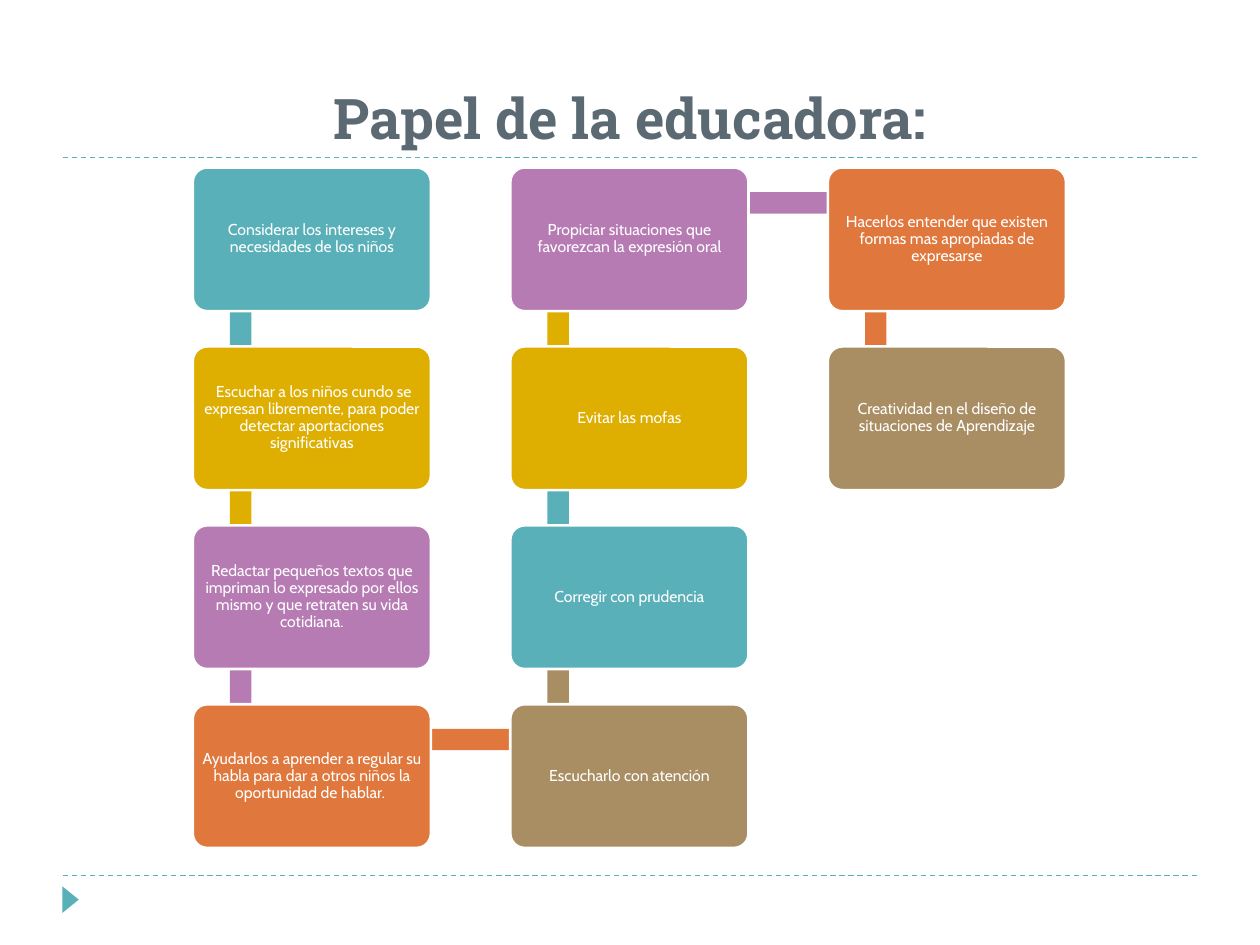
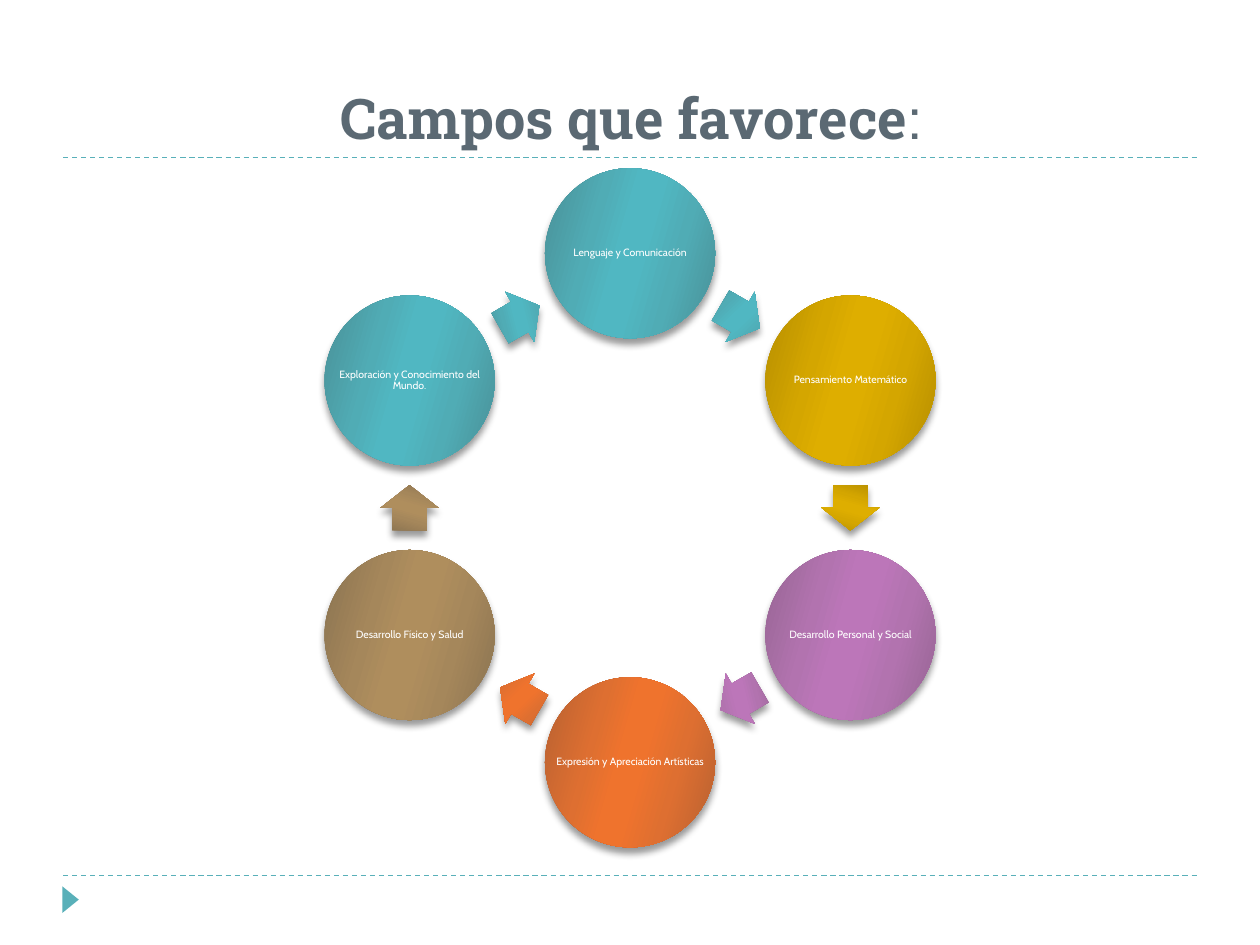
from dataclasses import dataclass
from itertools import cycle
from math import atan2, cos, degrees, hypot, radians, sin
from typing import Any

from lxml.etree import SubElement
from pptx import Presentation
from pptx.dml.color import RGBColor
from pptx.enum.dml import MSO_LINE
from pptx.enum.shapes import MSO_CONNECTOR, MSO_SHAPE
from pptx.enum.text import MSO_ANCHOR, MSO_AUTO_SIZE, PP_ALIGN
from pptx.oxml.ns import qn
from pptx.util import Inches, Pt

WHITE = RGBColor(0xFF, 0xFF, 0xFF)
SLATE = RGBColor(0x5B, 0x69, 0x73)
TEAL = RGBColor(0x59, 0xB0, 0xB9)
YELLOW = RGBColor(0xDE, 0xAE, 0x00)
PURPLE = RGBColor(0xB7, 0x7B, 0xB4)
ORANGE = RGBColor(0xE0, 0x77, 0x3C)
TAN = RGBColor(0xA9, 0x8D, 0x63)
BLACK = RGBColor(0x00, 0x00, 0x00)

TITLE_FONT = {"name": "Roboto Slab", "size": Pt(32), "bold": True}
STEP_FONT = {"name": "Cabin", "size": Pt(9)}
FIELD_FONT = {"name": "Cabin", "size": Pt(6)}

BOX_WIDTH, BOX_HEIGHT = 1.89, 1.14
GRID_LEFT, GRID_TOP = 1.53, 1.33
COLUMN_PITCH, ROW_PITCH, ROWS = 2.52, 1.42, 4
BAR_OFFSET_X, BAR_OFFSET_Y, BAR_THICKNESS = 0.38, 0.28, 0.17

RING_X, RING_Y, RING_RADIUS = 5.0, 4.03, 2.02
CIRCLE_SIZE = 1.35
ARROW_LENGTH, ARROW_WIDTH = 0.36, 0.46


@dataclass(frozen=True)
class Gloss:
    edge: RGBColor
    middle: RGBColor
    core: RGBColor

    def stops(self) -> list[tuple[int, RGBColor]]:
        return [(0, self.edge), (30, self.middle), (45, self.core),
                (55, self.core), (73, self.middle), (100, self.edge)]


@dataclass(frozen=True)
class Field:
    label: str
    gloss: Gloss


def gloss(*codes: str) -> Gloss:
    return Gloss(*(RGBColor.from_string(code) for code in codes))


GLOSS_TEAL = gloss("499097", "50ACB5", "50B7C2")
GLOSS_YELLOW = gloss("B68E00", "D4A600", "DEAE00")
GLOSS_PURPLE = gloss("966593", "B273AF", "BC76B9")
GLOSS_ORANGE = gloss("B76131", "DE6F31", "EF732D")
GLOSS_TAN = gloss("8A7351", "A5875B", "AF8E5D")

STEPS = [
    "Considerar los intereses y necesidades de los niños",
    " Escuchar a los niños cundo se expresan libremente, para poder detectar "
    "aportaciones significativas",
    "Redactar pequeños textos que impriman lo expresado por ellos mismo y que "
    "retraten su vida cotidiana.",
    "Ayudarlos a aprender a regular su habla para dar a otros niños la "
    "oportunidad de hablar. ",
    "Escucharlo con atención",
    "Corregir con prudencia",
    "Evitar las mofas",
    "Propiciar situaciones que favorezcan la expresión oral",
    "Hacerlos entender que existen formas mas apropiadas de expresarse",
    "Creatividad en el diseño de situaciones de Aprendizaje",
]

FIELDS = [
    Field("Lenguaje y Comunicación", GLOSS_TEAL),
    Field("Pensamiento Matemático", GLOSS_YELLOW),
    Field("Desarrollo Personal y Social", GLOSS_PURPLE),
    Field("Expresión y Apreciación Artísticas", GLOSS_ORANGE),
    Field("Desarrollo Físico y Salud", GLOSS_TAN),
    Field("Exploración y Conocimiento del Mundo.", GLOSS_TEAL),
]


def apply(target: Any, values: dict[str, Any]) -> None:
    for name, value in values.items():
        setattr(target, name, value)


def add_span(para: Any, text: str, color: RGBColor, font: dict[str, Any]) -> None:
    span = para.add_run()
    span.text = text
    apply(span.font, font)
    span.font.color.rgb = color


def write_label(shape: Any, text: str, font: dict[str, Any]) -> None:
    margin = Inches(0.01)
    frame = shape.text_frame
    apply(frame, {"word_wrap": True, "vertical_anchor": MSO_ANCHOR.MIDDLE,
                  "margin_left": margin, "margin_right": margin,
                  "margin_top": margin, "margin_bottom": margin})
    para = frame.paragraphs[0]
    apply(para, {"alignment": PP_ALIGN.CENTER, "line_spacing": 0.9})
    add_span(para, text, WHITE, font)


def add_centred(page: Any, kind: MSO_SHAPE, x: float, y: float, width: float,
                height: float, rotation: float = 0) -> Any:
    shape = page.shapes.add_shape(kind, Inches(x - width / 2), Inches(y - height / 2),
                                  Inches(width), Inches(height))
    shape.rotation = rotation
    shape.shadow.inherit = False
    shape.line.fill.background()
    return shape


def paint(shape: Any, color: RGBColor) -> None:
    shape.fill.solid()
    shape.fill.fore_color.rgb = color


def add_color(parent: Any, color: RGBColor) -> Any:
    return SubElement(parent, qn("a:srgbClr"), val=str(color))


def paint_glossy(shape: Any, finish: Gloss) -> None:
    shape.fill.gradient()
    shape.fill.gradient_angle = 344
    properties = shape.element.spPr
    stops = properties.find(".//" + qn("a:gsLst"))
    for stop in list(stops):
        stops.remove(stop)
    for percent, color in finish.stops():
        add_color(SubElement(stops, qn("a:gs"), pos=str(percent * 1000)), color)
    shadow = SubElement(properties.find(qn("a:effectLst")), qn("a:outerShdw"),
                        blurRad=str(Pt(4)), dist=str(Pt(3.4)), dir="5400000",
                        rotWithShape="0")
    SubElement(add_color(shadow, BLACK), qn("a:alpha"), val="40000")


def add_rule(page: Any, y: float) -> None:
    rule = page.shapes.add_connector(MSO_CONNECTOR.STRAIGHT, Inches(0.5), Inches(y),
                                     Inches(9.5), Inches(y))
    rule.line.color.rgb = TEAL
    apply(rule.line, {"width": Pt(0.75), "dash_style": MSO_LINE.DASH})
    SubElement(rule.element.spPr, qn("a:effectLst"))


def add_page(deck: Any, title: str, light_ending: str = "") -> Any:
    page = deck.slides.add_slide(deck.slide_layouts[5])
    for y in (6.95, 1.25):
        add_rule(page, y)
    paint(add_centred(page, MSO_SHAPE.ISOSCELES_TRIANGLE, 0.56, 7.14, 0.21, 0.13, 90), TEAL)
    heading = page.shapes.title
    apply(heading, {"left": Inches(0.5), "top": Inches(0.17),
                    "width": Inches(9), "height": Inches(1.08)})
    apply(heading.text_frame, {"vertical_anchor": MSO_ANCHOR.BOTTOM, "word_wrap": True,
                               "auto_size": MSO_AUTO_SIZE.NONE})
    para = heading.text_frame.paragraphs[0]
    para.alignment = PP_ALIGN.CENTER
    add_span(para, title, SLATE, TITLE_FONT)
    if light_ending:
        add_span(para, light_ending, SLATE, TITLE_FONT | {"bold": False})
    return page


def step_corner(index: int) -> tuple[float, float]:
    column, row = divmod(index, ROWS)
    if column % 2:
        row = ROWS - 1 - row
    return GRID_LEFT + column * COLUMN_PITCH, GRID_TOP + row * ROW_PITCH


def add_bar(page: Any, index: int, color: RGBColor) -> None:
    (left, top), (next_left, next_top) = step_corner(index), step_corner(index + 1)
    across, down = next_left - left, next_top - top
    bar = add_centred(page, MSO_SHAPE.RECTANGLE,
                      left + across / 2 + BAR_OFFSET_X, top + down / 2 + BAR_OFFSET_Y,
                      hypot(across, down) - 0.01, BAR_THICKNESS,
                      round(degrees(atan2(down, across))) % 360)
    paint(bar, color)


def build_role_page(deck: Any) -> None:
    page = add_page(deck, "Papel de la educadora:")
    colors = cycle([TEAL, YELLOW, PURPLE, ORANGE, TAN])
    for index, (step, color) in enumerate(zip(STEPS, colors)):
        if index < len(STEPS) - 1:
            add_bar(page, index, color)
        left, top = step_corner(index)
        box = add_centred(page, MSO_SHAPE.ROUNDED_RECTANGLE, left + BOX_WIDTH / 2,
                          top + BOX_HEIGHT / 2, BOX_WIDTH, BOX_HEIGHT)
        box.adjustments[0] = 0.1
        paint(box, color)
        box.line.color.rgb = WHITE
        box.line.width = Pt(1.5)
        write_label(box, step, STEP_FONT)


def ring_point(angle: float, radius: float) -> tuple[float, float]:
    return (RING_X + radius * sin(radians(angle)), RING_Y - radius * cos(radians(angle)))


def build_fields_page(deck: Any) -> None:
    page = add_page(deck, "Campos que favorece", ":")
    turn = 360 / len(FIELDS)
    for index, field in enumerate(FIELDS):
        angle = index * turn
        circle = add_centred(page, MSO_SHAPE.OVAL, *ring_point(angle, RING_RADIUS),
                             CIRCLE_SIZE, CIRCLE_SIZE)
        paint_glossy(circle, field.gloss)
        label = page.shapes.add_textbox(circle.left, circle.top, circle.width, circle.height)
        write_label(label, field.label, FIELD_FONT)
        heading = angle + turn / 2
        middle = ring_point(heading, RING_RADIUS * cos(radians(turn / 2)))
        arrow = add_centred(page, MSO_SHAPE.RIGHT_ARROW, *middle,
                            ARROW_LENGTH, ARROW_WIDTH, heading)
        arrow.adjustments[0] = 0.6
        arrow.adjustments[1] = 0.5
        paint_glossy(arrow, field.gloss)


def main() -> None:
    deck = Presentation()
    deck.slide_width, deck.slide_height = Inches(10), Inches(7.5)
    build_role_page(deck)
    build_fields_page(deck)
    deck.save("out.pptx")


if __name__ == "__main__":
    main()
